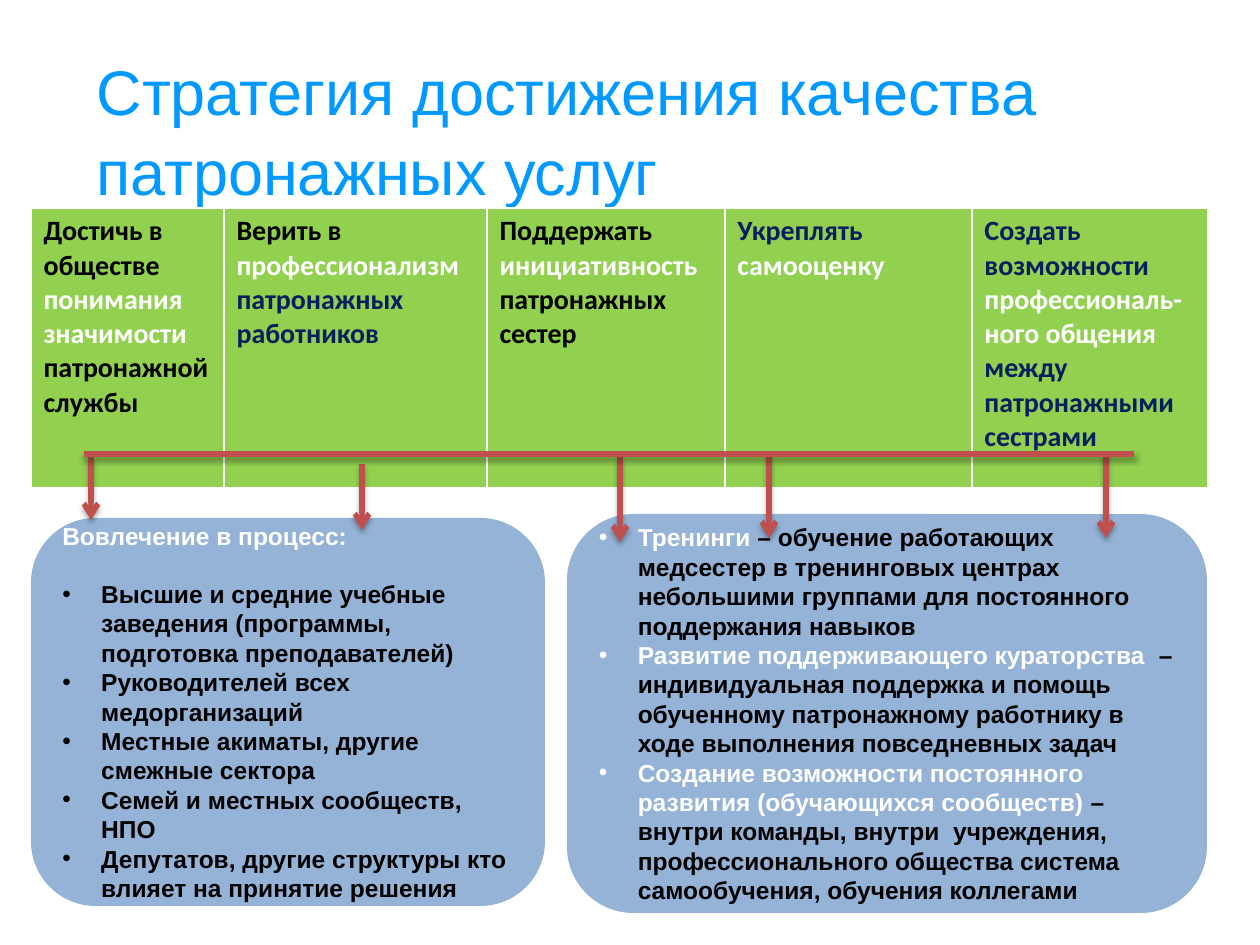
import pptx
import pptx.util
import pptx.dml.color
import pptx.enum.shapes
import pptx.enum.text
import pptx.oxml
import pptx.oxml.ns
from dataclasses import dataclass

PX = 914400 / 126  # EMU in one px
NS = pptx.oxml.ns.nsdecls("a")


@dataclass(frozen=True)
class Theme:
    title: str = "0099FF"
    cell: str = "92D050"
    panel: str = "95B3D7"
    line: str = "C0504D"
    black: str = "000000"
    white: str = "FFFFFF"
    navy: str = "002060"
    title_size: int = 36
    cell_size: int = 16
    panel_size: int = 14
    line_width: int = 3
    text_font: str = "Arial"
    cell_font: str = "Calibri"


T = Theme()
TITLE_FMT = {"name": T.text_font, "size": pptx.util.Pt(T.title_size), "bold": False}
CELL_FMT = {"name": T.cell_font, "size": pptx.util.Pt(T.cell_size), "bold": True}
PANEL_FMT = {"name": T.text_font, "size": pptx.util.Pt(T.panel_size), "bold": True}

GOALS = [
    [("Достичь в обществе ", T.black), ("понимания значимости ", T.white),
     ("патронажной службы", T.black)],
    [("Верить в", T.black), (" профессионализм ", T.white),
     ("патронажных работников", T.navy)],
    [("Поддержать ", T.black), ("инициативность", T.white),
     (" патронажных сестер", T.black)],
    [("Укреплять ", T.navy), ("самооценку", T.white)],
    [("Создать возможности ", T.navy), ("профессиональ-ного общения ", T.white),
     ("между патронажными сестрами", T.navy)],
]
INVOLVED = [[(text, T.black)] for text in (
    "Высшие и средние учебные заведения (программы, подготовка преподавателей)",
    "Руководителей всех медорганизаций",
    "Местные акиматы, другие смежные сектора",
    "Семей и местных сообществ, НПО",
    "Депутатов, другие структуры кто влияет на принятие решения",
)]
METHODS = [
    [("Тренинги", T.white),
     (" – обучение работающих медсестер в тренинговых центрах небольшими группами "
      "для постоянного поддержания навыков", T.black)],
    [("Развитие поддерживающего кураторства  ", T.white),
     ("– индивидуальная поддержка и помощь обученному патронажному работнику в ходе "
      "выполнения повседневных задач", T.black)],
    [("Создание возможности постоянного развития (обучающихся сообществ) ", T.white),
     ("– внутри команды, внутри  учреждения, профессионального общества система "
      "самообучения, обучения коллегами", T.black)],
]


def px(n):
    return pptx.util.Emu(round(n * PX))


def rgb(color):
    return pptx.dml.color.RGBColor.from_string(color)


def add_xml(parent, xml):
    parent.append(pptx.oxml.parse_xml(xml))


def set_attrs(obj, fmt):
    for name, value in fmt.items():
        setattr(obj, name, value)


def fill(obj, color):
    obj.fill.solid()
    obj.fill.fore_color.rgb = rgb(color)


def write(p, runs, fmt):
    p.alignment = pptx.enum.text.PP_ALIGN.LEFT
    for text, color in runs:
        r = p.add_run()
        r.text = text
        set_attrs(r.font, fmt)
        r.font.color.rgb = rgb(color)


def bullet(p):
    pPr = p._p.get_or_add_pPr()
    pPr.set("marL", str(px(39)))
    pPr.set("indent", str(-px(39)))
    add_xml(pPr, f'<a:buFont {NS} typeface="Arial"/>')
    add_xml(pPr, f'<a:buChar {NS} char="•"/>')


def title(s, x, y, w, h):
    sp = s.shapes.title
    set_attrs(sp, {"left": px(x), "top": px(y), "width": px(w), "height": px(h)})
    tf = sp.text_frame
    set_attrs(tf, {"word_wrap": True, "margin_top": px(38),
                   "auto_size": pptx.enum.text.MSO_AUTO_SIZE.NONE,
                   "vertical_anchor": pptx.enum.text.MSO_ANCHOR.TOP})
    p = tf.paragraphs[0]
    p.line_spacing = 1.06
    write(p, [("Стратегия достижения качества патронажных услуг", T.title)], TITLE_FMT)


def goals_table(s, x, y, widths, h):
    tbl = s.shapes.add_table(1, len(widths), px(x), px(y), px(sum(widths)), px(h)).table
    for i, (w, runs) in enumerate(zip(widths, GOALS)):
        tbl.columns[i].width = px(w)
        cell = tbl.cell(0, i)
        write(cell.text_frame.paragraphs[0], runs, CELL_FMT)
        tcPr = cell._tc.get_or_add_tcPr()
        # Borders come before the fill
        for side, pt in (("L", 1), ("R", 1), ("T", 1), ("B", 3)):
            add_xml(tcPr, f'<a:ln{side} {NS} w="{pptx.util.Pt(pt)}"><a:solidFill>'
                          f'<a:srgbClr val="{T.white}"/></a:solidFill></a:ln{side}>')
        fill(cell, T.cell)


def panel(s, x, y, w, h, items, heading=None):
    sp = s.shapes.add_shape(pptx.enum.shapes.MSO_SHAPE.ROUNDED_RECTANGLE,
                            px(x), px(y), px(w), px(h))
    sp.shadow.inherit = False
    fill(sp, T.panel)
    sp.line.fill.background()
    tf = sp.text_frame
    set_attrs(tf, {"word_wrap": True,
                   "vertical_anchor": pptx.enum.text.MSO_ANCHOR.MIDDLE})
    p = tf.paragraphs[0]
    if heading:
        write(p, [(heading, T.white)], PANEL_FMT)
        p.space_after = pptx.util.Pt(16)
    for i, runs in enumerate(items):
        if i or heading:
            p = tf.add_paragraph()
        write(p, runs, PANEL_FMT)
        bullet(p)


def line(s, x1, y1, x2, y2, arrow=False):
    c = s.shapes.add_connector(pptx.enum.shapes.MSO_CONNECTOR.STRAIGHT,
                               px(x1), px(y1), px(x2), px(y2))
    c.line.color.rgb = rgb(T.line)
    c.line.width = pptx.util.Pt(T.line_width)
    if arrow:
        add_xml(c.line._get_or_add_ln(), f'<a:tailEnd {NS} type="arrow"/>')
    add_xml(c._element.spPr,
            f'<a:effectLst {NS}><a:outerShdw blurRad="{pptx.util.Pt(3.1)}" '
            f'dist="{pptx.util.Pt(1.8)}" dir="5400000" rotWithShape="0">'
            f'<a:srgbClr val="{T.black}"><a:alpha val="35000"/></a:srgbClr>'
            f'</a:outerShdw></a:effectLst>')


def arrow_bar(s, x, y, w, drops):
    # Arrows are (offset from the bar's left, start and end below the bar)
    for dx, start, end in drops:
        line(s, x + dx, y + start, x + dx, y + end, arrow=True)
    line(s, x, y, x + w, y)


def main():
    prs = pptx.Presentation()
    set_attrs(prs, {"slide_width": px(1260), "slide_height": px(945)})
    s = prs.slides.add_slide(prs.slide_layouts[5])
    title(s, 84, 10, 1113, 169)
    goals_table(s, 31, 208, [193, 263, 238, 247, 236], 281)
    panel(s, 31, 518, 514, 388, INVOLVED, "Вовлечение в процесс:")
    panel(s, 567, 514, 640, 399, METHODS)
    arrow_bar(s, 84, 454, 1050, [(7, 3, 66), (278, 10, 76), (1022, 0, 84),
                                 (685, 0, 84), (536, 3, 88)])
    prs.save("out.pptx")


if __name__ == "__main__":
    main()
